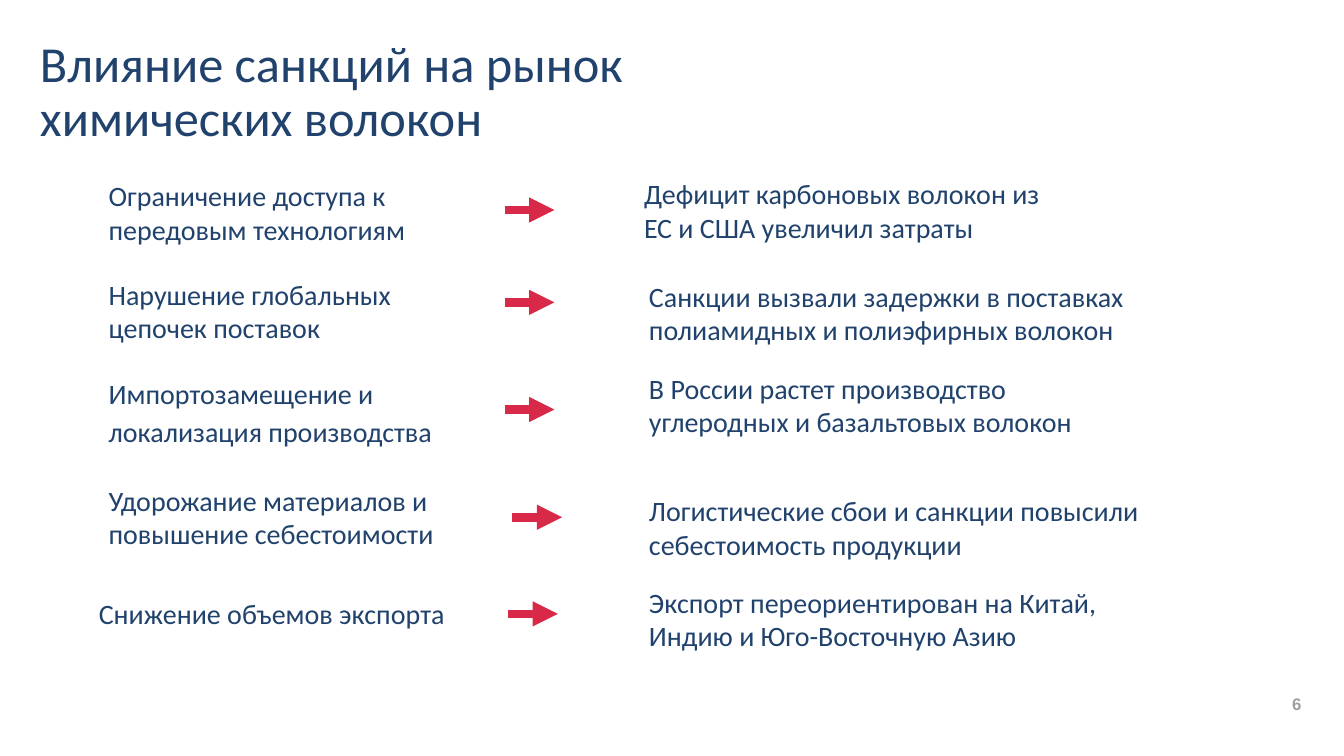
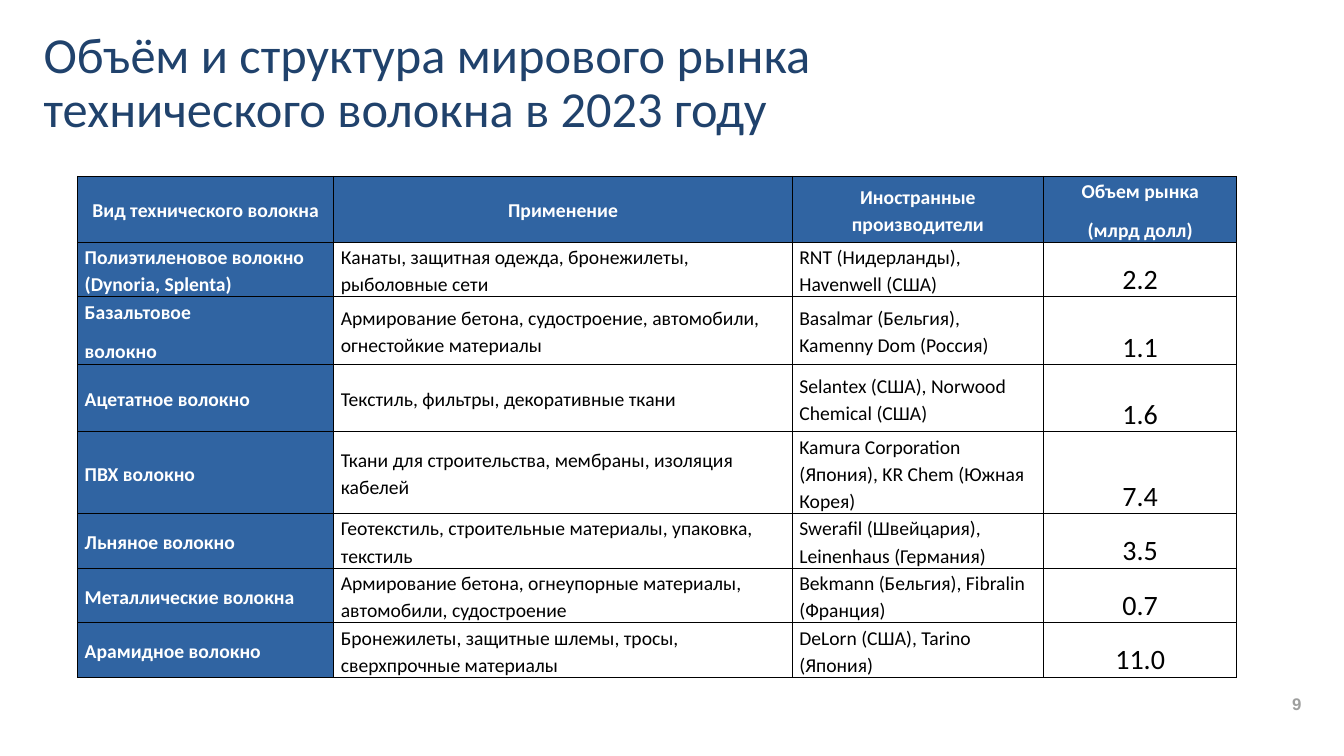
"""Build two slides on sanctions and the technical fibre market."""
from pptx import Presentation
from pptx.dml.color import RGBColor
from pptx.enum.shapes import MSO_CONNECTOR
from pptx.enum.text import MSO_ANCHOR, PP_ALIGN
from pptx.oxml import parse_xml
from pptx.oxml.ns import nsdecls
from pptx.util import Pt

NAVY, RED, GRAY = "20426C", "D82949", "9E9F9E"
BLUE, WHITE, BLACK = "3064A2", "FFFFFF", "000000"
BODY_FONT, NUMBER_FONT = "Calibri", "Arial"
ARROW_LENGTH = 35.5

CAUSES = [
    ("Ограничение доступа к передовым технологиям", 70.5, 124, 253.5, 1),
    ("Нарушение глобальных цепочек поставок", 70.5, 194.5, 253.5, 1),
    ("Импортозамещение и локализация производства", 70.5, 261.5, 253.5, 1.15),
    ("Удорожание материалов и повышение себестоимости", 70.5, 341.5, 253.5, 1),
    ("Снижение объемов экспорта", 63.5, 422.5, 268.5, 1),
]
EFFECTS = [
    ("Дефицит карбоновых волокон из ЕС и США увеличил затраты", 453, 122.5, 312),
    ("Санкции вызвали задержки в поставках полиамидных и полиэфирных волокон", 456.5, 196, 365),
    ("В России растет производство углеродных и базальтовых волокон", 456.5, 261.5, 323.5),
    ("Логистические сбои и санкции повысили себестоимость продукции", 456.5, 349, 371.5),
    ("Экспорт переориентирован на Китай, Индию и Юго-Восточную Азию", 456.5, 414.5, 371.5),
]
ARROW_STARTS = [(360.5, 150), (360.5, 216), (360.5, 292.5), (366, 369.5), (363, 438.5)]

COLUMN_WIDTHS = [183, 327.5, 179.5, 138]
ROW_HEIGHTS = [47, 39, 48.5, 48, 58.5, 39, 39, 39]
HEADERS = ["Вид технического волокна", "Применение", "Иностранные производители",
           "Объем рынка\n(млрд долл)"]
FIBRES = [
    ("Полиэтиленовое волокно (Dynoria, Splenta)",
     "Канаты, защитная одежда, бронежилеты, рыболовные сети",
     "RNT (Нидерланды), Havenwell (США)", "2.2"),
    ("Базальтовое\nволокно",
     "Армирование бетона, судостроение, автомобили, огнестойкие материалы",
     "Basalmar (Бельгия), Kamenny Dom (Россия)", "1.1"),
    ("Ацетатное волокно", "Текстиль, фильтры, декоративные ткани",
     "Selantex (США), Norwood Chemical (США)", "1.6"),
    ("ПВХ волокно", "Ткани для строительства, мембраны, изоляция кабелей",
     "Kamura Corporation (Япония), KR Chem (Южная Корея)", "7.4"),
    ("Льняное волокно", "Геотекстиль, строительные материалы, упаковка, текстиль",
     "Swerafil (Швейцария), Leinenhaus (Германия)", "3.5"),
    ("Металлические волокна",
     "Армирование бетона, огнеупорные материалы, автомобили, судостроение",
     "Bekmann (Бельгия), Fibralin (Франция)", "0.7"),
    ("Арамидное волокно", "Бронежилеты, защитные шлемы, тросы, сверхпрочные материалы",
     "DeLorn (США), Tarino (Япония)", "11.0"),
]


def color(value):
    """Turn a hex string into a colour."""
    return RGBColor.from_string(value)


def style_paragraph(para, size, ink, bold=False, font=BODY_FONT,
                    align=PP_ALIGN.LEFT, spacing=1, after=0):
    """Set the font and spacing of one paragraph."""
    para.alignment = align
    para.line_spacing = spacing
    para.space_after = Pt(after)
    para.font.name = font
    para.font.size = Pt(size)
    para.font.bold = bold
    para.font.color.rgb = color(ink)


def add_text(page, text, left, top, width, height, size, ink,
             anchor=MSO_ANCHOR.TOP, margins=True, **style):
    """Add a wrapped text box with one paragraph."""
    box = page.shapes.add_textbox(Pt(left), Pt(top), Pt(width), Pt(height))
    frame = box.text_frame
    frame.word_wrap = True
    frame.vertical_anchor = anchor
    if not margins:
        frame.margin_left = frame.margin_right = 0
        frame.margin_top = frame.margin_bottom = 0
    frame.text = text
    style_paragraph(frame.paragraphs[0], size, ink, **style)


def add_page(deck, title, left, width, height, number):
    """Add a blank slide with its title and page number."""
    page = deck.slides.add_slide(deck.slide_layouts[6])
    add_text(page, number, 908, 485.5, 36.5, 35, 12, GRAY, MSO_ANCHOR.MIDDLE, False,
             bold=True, font=NUMBER_FONT, align=PP_ALIGN.CENTER)
    add_text(page, title, left, 27.5, width, height, 36, NAVY, MSO_ANCHOR.MIDDLE,
             spacing=0.9)
    return page


def add_arrow(page, left, top):
    """Add a short red arrow pointing right."""
    arrow = page.shapes.add_connector(MSO_CONNECTOR.STRAIGHT, Pt(left), Pt(top),
                                      Pt(left + ARROW_LENGTH), Pt(top))
    arrow.line.width = Pt(6)
    arrow.line.color.rgb = color(RED)
    arrow.line._get_or_add_ln().append(
        parse_xml(f'<a:tailEnd {nsdecls("a")} type="triangle"/>'))
    arrow._element.spPr.append(parse_xml(f'<a:effectLst {nsdecls("a")}/>'))


def add_borders(cell):
    """Draw a thin black line on each side of a cell."""
    properties = cell._tc.get_or_add_tcPr()
    for side in ("lnL", "lnR", "lnT", "lnB"):
        properties.append(parse_xml(
            f'<a:{side} {nsdecls("a")} w="{Pt(1)}"><a:solidFill>'
            f'<a:srgbClr val="{BLACK}"/></a:solidFill></a:{side}>'))


def fill_cell(cell, text, margin, size=14, heading=False,
              align=PP_ALIGN.LEFT, anchor=MSO_ANCHOR.MIDDLE):
    """Write and style one table cell."""
    add_borders(cell)
    if heading:
        cell.fill.solid()
        cell.fill.fore_color.rgb = color(BLUE)
    else:
        cell.fill.background()
    cell.margin_left = cell.margin_right = Pt(margin)
    cell.margin_top = cell.margin_bottom = 0
    cell.vertical_anchor = anchor
    cell.text = text
    for para in cell.text_frame.paragraphs:
        style_paragraph(para, size, WHITE if heading else BLACK, heading,
                        align=align, spacing=1.15, after=8)


def add_fibre_table(page):
    """Add the table of fibres, uses, makers and market volumes."""
    frame = page.shapes.add_table(len(ROW_HEIGHTS), len(COLUMN_WIDTHS), Pt(55.5), Pt(126),
                                  Pt(sum(COLUMN_WIDTHS)), Pt(sum(ROW_HEIGHTS)))
    table = frame.table
    table.first_row = table.horz_banding = False
    for column, width in zip(table.columns, COLUMN_WIDTHS):
        column.width = Pt(width)
    for row, height in zip(table.rows, ROW_HEIGHTS):
        row.height = Pt(height)
    for index, header in enumerate(HEADERS):
        fill_cell(table.cell(0, index), header, 3, heading=True, align=PP_ALIGN.CENTER)
    for index, (fibre, usage, makers, volume) in enumerate(FIBRES, start=1):
        fill_cell(table.cell(index, 0), fibre, 5, heading=True)
        fill_cell(table.cell(index, 1), usage, 5)
        fill_cell(table.cell(index, 2), makers, 5)
        fill_cell(table.cell(index, 3), volume, 5, size=20,
                  align=PP_ALIGN.CENTER, anchor=MSO_ANCHOR.BOTTOM)


def build_sanctions_page(deck):
    """Build the slide that pairs sanctions with their effects."""
    page = add_page(deck, "Влияние санкций на рынок химических волокон",
                    21.5, 587.5, 78.5, "6")
    for cause, effect, start in zip(CAUSES, EFFECTS, ARROW_STARTS):
        text, left, top, width, spacing = cause
        add_text(page, text, left, top, width, 55.5, 20, NAVY, spacing=spacing)
        add_arrow(page, *start)
        add_text(page, *effect, 55.5, 20, NAVY)


def build_market_page(deck):
    """Build the slide with the world market table."""
    page = add_page(deck, "Объём и структура мирового рынка технического волокна в 2023 году",
                    24, 697, 65, "9")
    add_fibre_table(page)


def main():
    """Build and save the deck."""
    deck = Presentation()
    deck.slide_width, deck.slide_height = Pt(960), Pt(540)
    build_sanctions_page(deck)
    build_market_page(deck)
    deck.save("out.pptx")


if __name__ == "__main__":
    main()
